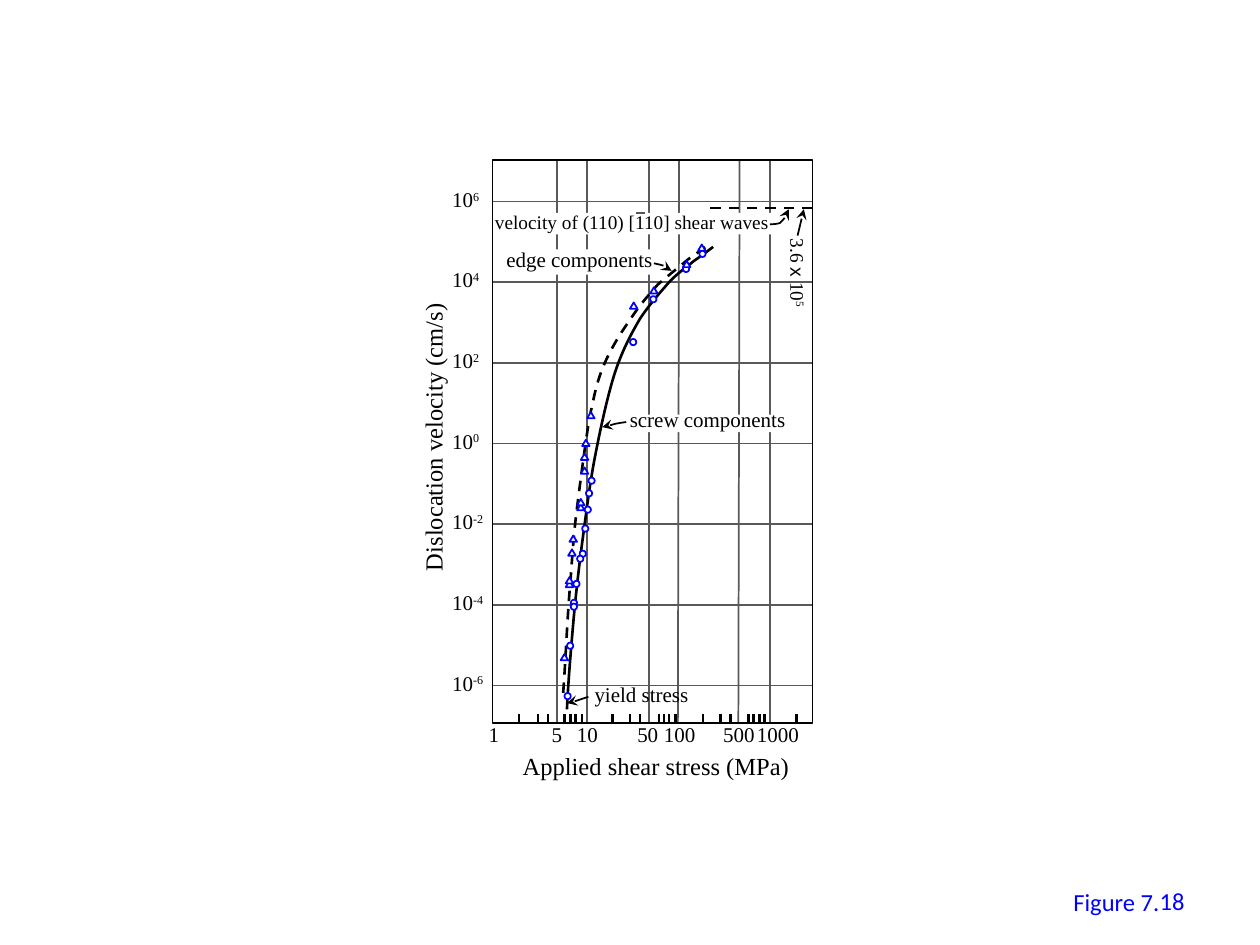
from dataclasses import dataclass
from typing import Any

from lxml import etree
from pptx import Presentation
from pptx import util as u
from pptx.dml.color import RGBColor
from pptx.enum import dml, shapes, text
from pptx.oxml.ns import qn

SERIF, SANS, CAPTION = "Times New Roman", "Arial", "Calibri"
BLACK, WHITE, BLUE, GREY = "000000", "FFFFFF", "0000FF", "595959"
LEFT, TOP, RIGHT, BOTTOM = 3.91, 1.27, 6.45, 5.74
DECADE_STEP = 0.64  # height of two decades of velocity


@dataclass
class Stroke:
    color: str = BLACK
    width: float = 1
    dashed: bool = False
    arrow: bool = False


@dataclass
class Span:
    words: str
    font: str = SERIF
    raised: bool = False


@dataclass
class Label:
    left: float
    top: float
    width: float
    height: float
    spans: list[Span]
    size: float = 12
    color: str = BLACK
    rotation: float = 0


@dataclass
class Curve:
    points: list[tuple[float, float]]  # start, then three points per Bezier piece
    stroke: Stroke


def length(inches: float) -> int:
    return u.Cm(inches * 2.54)


def rgb(value: str) -> RGBColor:
    return RGBColor.from_string(value)


def apply(target: Any, values: dict[str, Any]) -> None:
    for name, value in values.items():
        setattr(target, name, value)


def style_line(line: Any, stroke: Stroke) -> None:
    line.color.rgb = rgb(stroke.color)
    line.width = u.Pt(stroke.width)
    if stroke.dashed:
        line.dash_style = dml.MSO_LINE.DASH
    if stroke.arrow:
        etree.SubElement(line._get_or_add_ln(), qn("a:headEnd"), type="stealth")


def draw_line(parent: Any, x1: float, y1: float, x2: float, y2: float, stroke: Stroke) -> None:
    line = parent.add_connector(shapes.MSO_CONNECTOR.STRAIGHT, *map(length, (x1, y1, x2, y2)))
    style_line(line.line, stroke)
    etree.SubElement(line._element.spPr, qn("a:effectLst"))


def draw_shape(parent: Any, kind: Any, box: tuple, fill: str | None, stroke: Stroke | None) -> None:
    shape = parent.add_shape(kind, *map(length, box))
    shape.shadow.inherit = False
    if fill:
        shape.fill.solid()
        shape.fill.fore_color.rgb = rgb(fill)
    else:
        shape.fill.background()
    if stroke:
        style_line(shape.line, stroke)
    else:
        shape.line.fill.background()


def draw_curve(parent: Any, curve: Curve) -> None:
    start, *rest = [(length(x), length(y)) for x, y in curve.points]
    builder = parent.build_freeform(*start)
    builder.add_line_segments(rest, close=False)
    shape = builder.convert_to_shape()
    shape.shadow.inherit = False
    shape.fill.background()
    style_line(shape.line, curve.stroke)
    # Join every three straight segments into one Bezier piece
    outline = shape._element.find(".//" + qn("a:path"))
    segments = outline.findall(qn("a:lnTo"))
    for i in range(0, len(segments), 3):
        bezier = etree.SubElement(outline, qn("a:cubicBezTo"))
        for segment in segments[i:i + 3]:
            bezier.append(segment[0])
            outline.remove(segment)


def draw_label(parent: Any, label: Label) -> Any:
    box = parent.add_textbox(*map(length, (label.left, label.top, label.width, label.height)))
    box.rotation = label.rotation
    apply(box.text_frame, {"word_wrap": False,
                           "auto_size": text.MSO_AUTO_SIZE.SHAPE_TO_FIT_TEXT})
    para = box.text_frame.paragraphs[0]
    for part in label.spans:
        span = para.add_run()
        span.text = part.words
        apply(span.font, {"name": part.font, "size": u.Pt(label.size)})
        span.font.color.rgb = rgb(label.color)
        if part.raised:
            span.font._element.set("baseline", "30000")
    return box


# Grid, as (x at top, x at bottom)
GRID_X = [(4.66, 4.66), (6.11, 6.11), (5.87, 5.86), (5.39, 5.38), (5.15, 5.15), (4.42, 4.42)]
MASKS = [(3.94, 1.69, 2.19, 0.17), (3.98, 1.98, 1.2, 0.2), (4.98, 3.29, 1.31, 0.14)]
TICKS = [4.12, 4.27, 4.35, 4.48, 4.53, 4.57, 4.62, 4.86, 5, 5.08, 5.23, 5.27, 5.31, 5.36,
         5.58, 5.72, 5.8, 5.94, 5.98, 6.03, 6.07, 6.32]

# Axis labels
STRESS = [("1", 3.78, 0.29), ("5", 4.28, 0.29), ("10", 4.48, 0.37), ("50", 4.96, 0.37),
          ("100", 5.17, 0.45), ("500", 5.64, 0.45), ("1000", 5.91, 0.54)]
AXIS_LABELS = [
    Label(2.27, 3.29, 2.34, 0.34, [Span("Dislocation velocity (cm/s)")], 14, rotation=270),
    Label(4.05, 5.91, 2.4, 0.34, [Span("Applied shear stress (MPa)")], 14),
    *[Label(x, 5.68, width, 0.3, [Span(words)]) for words, x, width in STRESS],
    *[Label(3.49, 1.43 + i * DECADE_STEP, 0.47 if power < 0 else 0.43, 0.3,
            [Span("10"), Span(str(power), raised=True)])
      for i, power in enumerate(range(6, -7, -2))],
]

# Notes inside the plot
NOTES = [
    Label(4.9, 3.18, 1.45, 0.3, [Span("screw components")]),
    Label(3.92, 1.91, 1.38, 0.3, [Span("edge components")]),
    Label(3.83, 1.62, 2.39, 0.29, [Span("velocity of (110) [110] shear waves")], 11),
    Label(5.95, 2.03, 0.76, 0.29,
          [Span("3.6 "), Span("x", SANS), Span(" 10"), Span("5", raised=True)], 11, rotation=90),
    Label(4.62, 5.36, 0.95, 0.3, [Span("yield stress")]),
]

SOLID, DASHED = Stroke(width=1.5), Stroke(width=1.5, dashed=True)
ARROW, GRID = Stroke(arrow=True), Stroke(GREY)
FITS = [
    Curve([(4.5, 5.63), (4.51, 5.41), (4.53, 5.18), (4.55, 4.95), (4.57, 4.72), (4.6, 4.46),
           (4.63, 4.24), (4.66, 4.02), (4.68, 3.85), (4.72, 3.64), (4.76, 3.43), (4.82, 3.15),
           (4.88, 2.96), (4.94, 2.78), (5.01, 2.65), (5.08, 2.53), (5.16, 2.41), (5.25, 2.31),
           (5.32, 2.23), (5.39, 2.16), (5.45, 2.12), (5.51, 2.07), (5.57, 2.03), (5.66, 1.96),
           (5.66, 1.96)], SOLID),
    Curve([(4.47, 5.5), (4.49, 5.23), (4.5, 4.96), (4.52, 4.71), (4.54, 4.47), (4.55, 4.26),
           (4.58, 4.03), (4.61, 3.79), (4.65, 3.49), (4.68, 3.31), (4.72, 3.13), (4.73, 3.06),
           (4.78, 2.93), (4.83, 2.8), (4.92, 2.65), (5, 2.54), (5.07, 2.43), (5.15, 2.34),
           (5.22, 2.26), (5.3, 2.19), (5.39, 2.12), (5.46, 2.06), (5.53, 2.01), (5.63, 1.94),
           (5.63, 1.94)], DASHED),
]
POINTERS = [
    Curve([(4.78, 3.39), (4.8, 3.38), (4.83, 3.38), (4.86, 3.37), (4.89, 3.36), (4.97, 3.35),
           (4.97, 3.35)], ARROW),
    Curve([(5.33, 2.15), (5.31, 2.13), (5.29, 2.12), (5.27, 2.11), (5.24, 2.1), (5.19, 2.09),
           (5.19, 2.09)], ARROW),
    Curve([(6.26, 1.66), (6.26, 1.67), (6.25, 1.69), (6.24, 1.71), (6.23, 1.73), (6.21, 1.75),
           (6.19, 1.77), (6.17, 1.78), (6.11, 1.78), (6.11, 1.78)], ARROW),
    Curve([(4.5, 5.58), (4.53, 5.57), (4.55, 5.57), (4.58, 5.56), (4.61, 5.55), (4.67, 5.53),
           (4.67, 5.53)], ARROW),
]

# Measured points (left, top)
SCREW = [(5.55, 1.99), (5.42, 2.11), (5.16, 2.35), (5, 2.69), (4.67, 3.79), (4.65, 3.89),
         (4.64, 4.02), (4.62, 4.17), (4.6, 4.37), (4.58, 4.41), (4.55, 4.61), (4.53, 4.76),
         (4.53, 4.79), (4.5, 5.1), (4.48, 5.5)]
EDGE = [(4.45, 5.19), (4.49, 4.61), (4.49, 4.58), (4.51, 4.36), (4.52, 4.25), (4.58, 4),
        (4.58, 3.96), (4.61, 3.71), (4.61, 3.6), (4.62, 3.49), (4.66, 3.27), (5, 2.4),
        (5.42, 2.07), (5.54, 1.94), (5.16, 2.28)]


def main() -> None:
    deck = Presentation()
    apply(deck, {"slide_width": length(10), "slide_height": length(7.5)})
    page = deck.slides.add_slide(deck.slide_layouts[6]).shapes
    kinds = shapes.MSO_SHAPE

    # Grid and frame
    grid = page.add_group_shape().shapes
    for x_top, x_bottom in GRID_X:
        draw_line(grid, x_top, TOP, x_bottom, BOTTOM, GRID)
    for i in range(7):
        y = 1.6 + i * DECADE_STEP
        draw_line(grid, RIGHT, y, LEFT, y, GRID)
    for mask in MASKS:
        draw_shape(page, kinds.RECTANGLE, mask, WHITE, None)
    draw_shape(page, kinds.RECTANGLE, (LEFT, TOP, RIGHT - LEFT, BOTTOM - TOP), None, Stroke())
    for x in TICKS:
        draw_line(page, x, 5.67, x, BOTTOM, SOLID)
    for label in AXIS_LABELS:
        draw_label(page, label)

    # Curves and measured points
    draw_line(page, RIGHT, 1.65, 5.62, 1.65, DASHED)
    for curve in FITS:
        draw_curve(page, curve)
    markers = page.add_group_shape().shapes
    for kind, width, points in ((kinds.OVAL, 0.05, SCREW),
                                (kinds.ISOSCELES_TRIANGLE, 0.06, EDGE)):
        for x, y in points:
            draw_shape(markers, kind, (x, y, width, 0.05), WHITE, Stroke(BLUE))

    # Notes, pointers and the bar over the Miller index
    for label in NOTES:
        draw_label(page, label)
    for curve in POINTERS:
        draw_curve(page, curve)
    draw_line(page, 6.38, 1.66, 6.33, 1.87, ARROW)
    draw_line(page, 5.05, 1.69, 5.12, 1.69, GRID)

    # Figure number
    draw_label(page, Label(8.42, 6.99, 0.89, 0.34, [Span("Figure 7.", CAPTION)], 14, BLUE))
    number = draw_label(page, Label(7.17, 6.95, 2.33, 0.4, [Span("18", CAPTION)], 14, BLUE))
    apply(number.text_frame, {"word_wrap": True, "auto_size": text.MSO_AUTO_SIZE.NONE,
                              "vertical_anchor": text.MSO_ANCHOR.MIDDLE})
    number.text_frame.paragraphs[0].alignment = text.PP_ALIGN.RIGHT

    deck.save("out.pptx")


if __name__ == "__main__":
    main()
